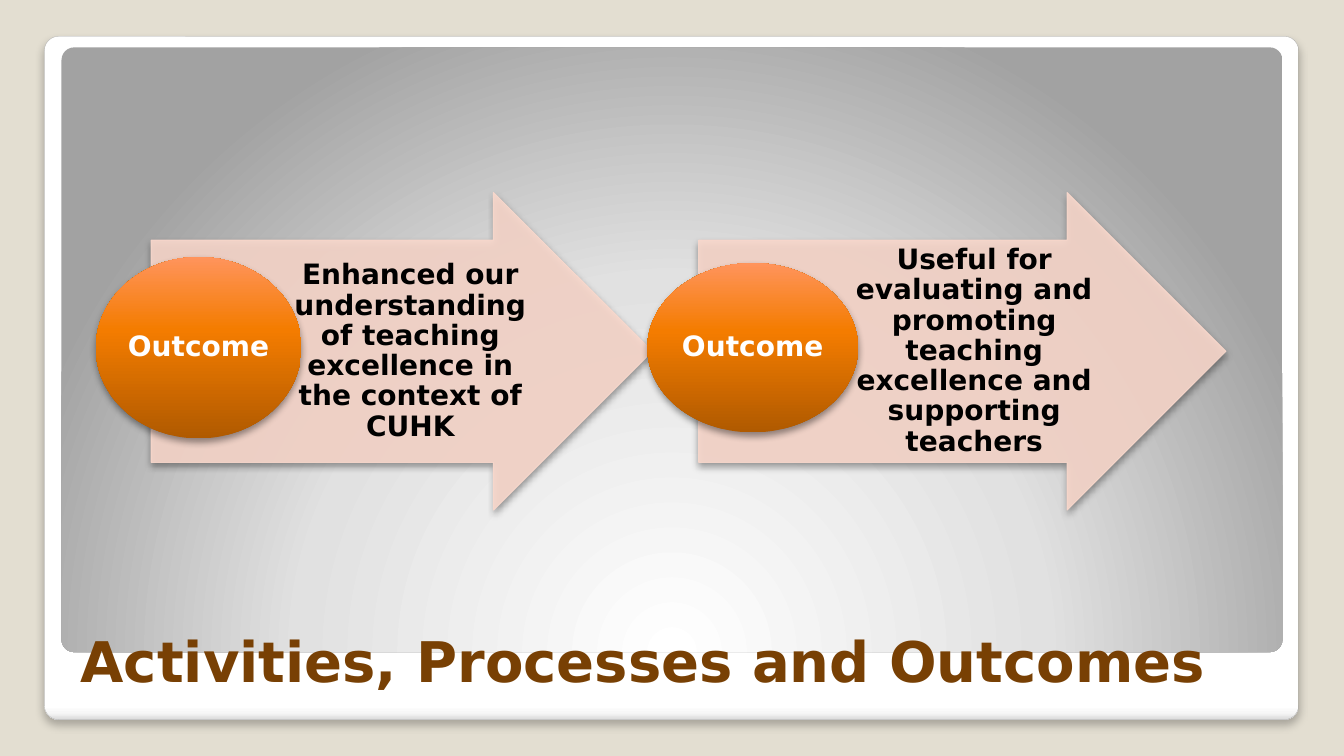
from lxml import etree
from pptx import Presentation
from pptx.dml.color import RGBColor
from pptx.enum.shapes import MSO_SHAPE
from pptx.enum.text import MSO_ANCHOR, PP_ALIGN
from pptx.oxml import parse_xml
from pptx.oxml.ns import nsdecls, qn
from pptx.util import Inches, Pt

FONT = "DejaVu Sans"
BACKGROUND = RGBColor(0xE3, 0xDE, 0xD1)
CARD_LINE = RGBColor(0xA4, 0xA4, 0xA4)
ARROW_PINK = RGBColor(0xF9, 0xD8, 0xCC)
TITLE_BROWN = RGBColor(0x78, 0x40, 0x04)
BLACK = RGBColor(0, 0, 0)
WHITE = RGBColor(0xFF, 0xFF, 0xFF)

CARD_STOPS = [(0, WHITE), (98, WHITE), (99, RGBColor(0xF7, 0xF7, 0xF7)),
              (100, RGBColor(0xDA, 0xDA, 0xDA))]
PANEL_STOPS = [(0, WHITE), (55, RGBColor(0xE1, 0xE1, 0xE1)),
               (100, RGBColor(0xA2, 0xA2, 0xA2))]
ORANGE_STOPS = [(0, RGBColor(0xB0, 0x5A, 0x00)), (60, RGBColor(0xF4, 0x7C, 0x00)),
                (100, RGBColor(0xFF, 0x94, 0x5C))]
LINEAR = '<a:lin ang="{}" scaled="0"/>'
FROM_BELOW = ('<a:path path="circle"><a:fillToRect l="50000" t="175000" '
              'r="50000" b="-75000"/></a:path>')

ARROW_TOP, ARROW_HEIGHT = 1.91, 3.15
SHAFT, HEAD = 0.7, 0.5
CIRCLE_MIDDLE = 3.45

# arrow left, arrow width, circle left, circle width, circle height, text
OUTCOMES = [
    (1.5, 4.97, 0.95, 2.04, 1.8,
     "Enhanced our understanding of teaching excellence in the context of CUHK"),
    (6.93, 5.23, 6.42, 2.09, 1.68,
     "Useful for evaluating and promoting teaching excellence and supporting teachers"),
]


class SlideBuilder:
    def __init__(self, presentation):
        self.slide = presentation.slides.add_slide(presentation.slide_layouts[5])
        self.slide.background.fill.solid()
        self.slide.background.fill.fore_color.rgb = BACKGROUND

    def shape(self, kind, left, top, width, height, adjustments=()):
        shape = self.slide.shapes.add_shape(
            kind, Inches(left), Inches(top), Inches(width), Inches(height))
        for index, value in enumerate(adjustments):
            shape.adjustments[index] = value
        shape.shadow.inherit = False
        shape.line.fill.background()
        return shape

    def gradient(self, shape, stops, direction):
        shape.fill.background()
        stop_xml = "".join(
            f'<a:gs pos="{position * 1000}"><a:srgbClr val="{color}"/></a:gs>'
            for position, color in stops)
        properties = shape._element.spPr
        properties.replace(properties.find(qn("a:noFill")), parse_xml(
            f'<a:gradFill {nsdecls("a")} rotWithShape="1">'
            f'<a:gsLst>{stop_xml}</a:gsLst>{direction}</a:gradFill>'))

    def shadow(self, shape, opacity=40, blur=5.2, distance=3):
        effects = shape._element.spPr.find(qn("a:effectLst"))
        effects.append(parse_xml(
            f'<a:outerShdw {nsdecls("a")} blurRad="{Pt(blur)}" dist="{Pt(distance)}" '
            f'dir="5400000" rotWithShape="0"><a:srgbClr val="000000">'
            f'<a:alpha val="{opacity * 1000}"/></a:srgbClr></a:outerShdw>'))

    def text(self, shape, text, size, color, alignment, anchor):
        frame = shape.text_frame
        frame.text = text
        frame.word_wrap = True
        frame.vertical_anchor = anchor
        paragraph = frame.paragraphs[0]
        paragraph.alignment = alignment
        font = paragraph.runs[0].font
        font.name, font.size, font.bold = FONT, Pt(size), True
        font.color.rgb = color
        return frame

    def label(self, shape, text, color, left_inset=0.01, right_inset=0.01):
        frame = self.text(shape, text, 20, color, PP_ALIGN.CENTER, MSO_ANCHOR.MIDDLE)
        frame.margin_left, frame.margin_right = Inches(left_inset), Inches(right_inset)
        frame.margin_top = frame.margin_bottom = Inches(0.01)
        frame.paragraphs[0].line_spacing = 0.9

    def frame(self):
        card = self.shape(MSO_SHAPE.ROUNDED_RECTANGLE, 0.44, 0.36, 12.44, 6.78, [0.021])
        self.gradient(card, CARD_STOPS, LINEAR.format(5400000))
        card.line.color.rgb = CARD_LINE
        card.line.width = Pt(0.16)
        self.shadow(card, opacity=25, blur=6, distance=4)
        panel = self.shape(MSO_SHAPE.ROUNDED_RECTANGLE, 0.61, 0.47, 12.11, 6, [0.021])
        self.gradient(panel, PANEL_STOPS, FROM_BELOW)

    def title(self, text):
        """Fill the title placeholder and lift it above the frame."""
        title = self.slide.shapes.title
        title.left, title.top = Inches(0.7), Inches(5.78)
        title.width, title.height = Inches(11.93), Inches(1.15)
        self.text(title, text, 40, TITLE_BROWN, PP_ALIGN.LEFT, MSO_ANCHOR.BOTTOM)
        self.slide.shapes._spTree.append(title._element)

    def arrow(self, left, width, text):
        arrow = self.shape(MSO_SHAPE.RIGHT_ARROW, left, ARROW_TOP, width,
                           ARROW_HEIGHT, [SHAFT, HEAD])
        arrow.fill.solid()
        arrow.fill.fore_color.rgb = ARROW_PINK
        arrow.line.color.rgb = ARROW_PINK
        arrow.line.width = Pt(0.75)
        for color in arrow._element.spPr.iter(qn("a:srgbClr")):
            etree.SubElement(color, qn("a:alpha")).set("val", "90000")
        self.shadow(arrow)
        shaft_height = SHAFT * ARROW_HEIGHT
        box = self.slide.shapes.add_textbox(
            Inches(left + width / 4),
            Inches(ARROW_TOP + (ARROW_HEIGHT - shaft_height) / 2),
            Inches(width * 0.75 - shaft_height / 2), Inches(shaft_height))
        self.label(box, text, BLACK, 0.06, 0.03)

    def circle(self, left, width, height, text):
        circle = self.shape(MSO_SHAPE.OVAL, left, CIRCLE_MIDDLE - height / 2, width, height)
        self.gradient(circle, ORANGE_STOPS, LINEAR.format(16200000))
        self.shadow(circle)
        self.label(circle, text, WHITE)


def main():
    presentation = Presentation()
    presentation.slide_width, presentation.slide_height = Inches(13.33), Inches(7.5)
    builder = SlideBuilder(presentation)
    builder.frame()
    builder.title("Activities, Processes and Outcomes")
    for left, width, circle_left, circle_width, circle_height, text in OUTCOMES:
        builder.arrow(left, width, text)
        builder.circle(circle_left, circle_width, circle_height, "Outcome")
    presentation.save("out.pptx")


if __name__ == "__main__":
    main()
